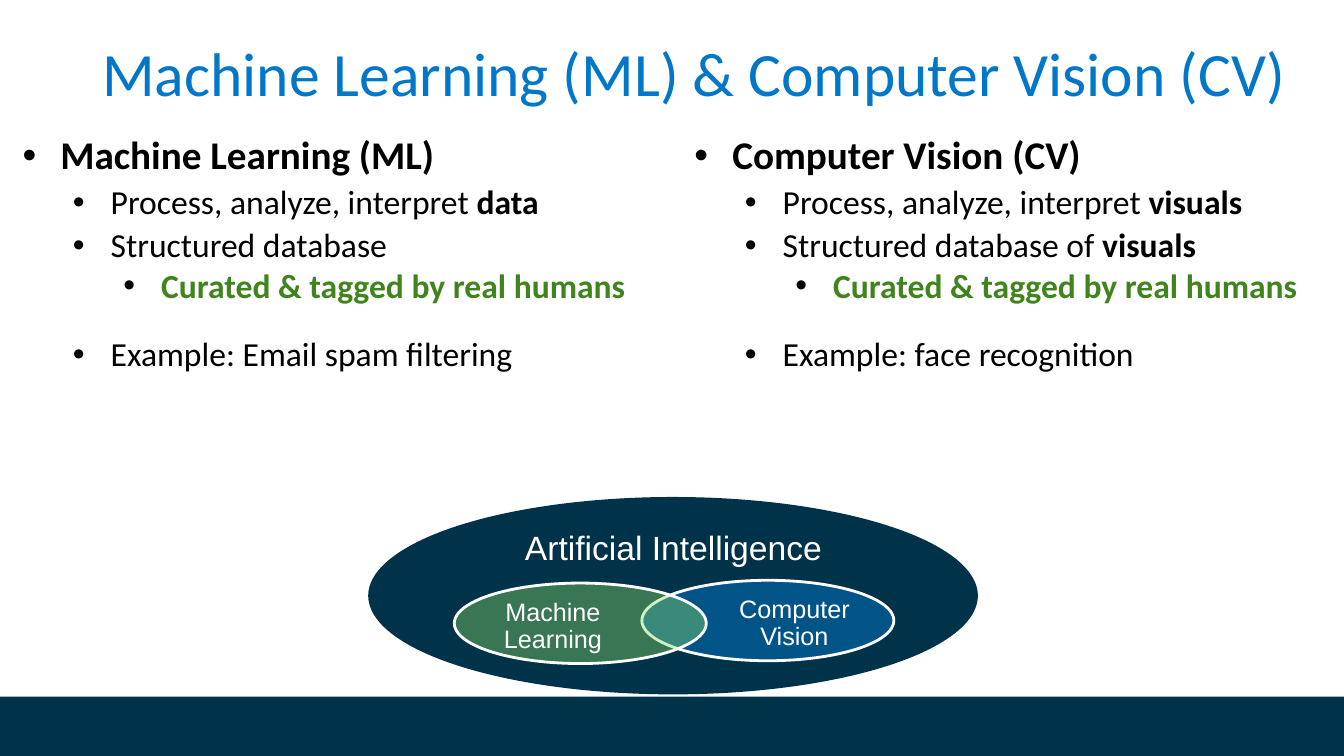
import lxml.etree
import pptx
import pptx.dml.color
import pptx.enum.shapes
import pptx.enum.text
import pptx.oxml.ns
import pptx.util

Pt = pptx.util.Pt
qn = pptx.oxml.ns.qn
Shape = pptx.enum.shapes.MSO_SHAPE
Align = pptx.enum.text.PP_ALIGN
Anchor = pptx.enum.text.MSO_ANCHOR

COLORS = {
    "title": "0077C8",
    "text": "000000",
    "highlight": "40841D",
    "band": "003349",
    "outer": "003249",
    "vision": "0277C8",
    "learning": "8EDD65",
    "white": "FFFFFF",
}

# Text size, line spacing, space before and space after for each outline level
LEVELS = [(28, 0.9, 10, 0), (24, 0.9, 5, 0), (24, 1.0, 0, 18)]


class SlideBuilder:
    def __init__(self, slide):
        self.slide = slide

    def color(self, name):
        return pptx.dml.color.RGBColor.from_string(COLORS[name])

    def shape(self, kind, left, top, width, height, fill, alpha=None, outlined=False):
        shape = self.slide.shapes.add_shape(
            kind, Pt(left), Pt(top), Pt(width), Pt(height))
        shape.shadow.inherit = False
        shape.fill.solid()
        shape.fill.fore_color.rgb = self.color(fill)
        if alpha is not None:
            color_element = next(shape.element.spPr.iter(qn("a:srgbClr")))
            lxml.etree.SubElement(color_element, qn("a:alpha"), val=str(alpha * 1000))
        if outlined:
            shape.line.color.rgb = self.color("white")
            shape.line.width = Pt(2)
        else:
            shape.line.fill.background()

    def text_frame(self, left, top, width, height, anchor, inset=True):
        box = self.slide.shapes.add_textbox(Pt(left), Pt(top), Pt(width), Pt(height))
        frame = box.text_frame
        frame.word_wrap = True
        frame.vertical_anchor = anchor
        frame.margin_left = frame.margin_right = Pt(7.2 if inset else 0)
        frame.margin_top = frame.margin_bottom = Pt(3.6 if inset else 0)
        return frame

    def run(self, paragraph, text, size, color, font="Calibri", bold=False):
        run = paragraph.add_run()
        run.text = text
        run.font.name = font
        run.font.size = Pt(size)
        run.font.bold = bold
        run.font.color.rgb = self.color(color)

    def title(self, text, left, top, width, height):
        frame = self.text_frame(left, top, width, height, Anchor.MIDDLE)
        paragraph = frame.paragraphs[0]
        paragraph.line_spacing = 0.9
        self.run(paragraph, text, 44, "title")

    def label(self, text, size, left, top, width, height, anchor=Anchor.MIDDLE):
        frame = self.text_frame(left, top, width, height, anchor, inset=False)
        paragraph = frame.paragraphs[0]
        paragraph.alignment = Align.CENTER
        paragraph.line_spacing = 0.9
        self.run(paragraph, text, size, "white", font="Arial")

    def bullet(self, paragraph, level):
        properties = paragraph._p.get_or_add_pPr()
        properties.set("marL", str(Pt(36 * (level + 1))))
        properties.set("indent", str(Pt(-27)))
        bullet_color = lxml.etree.SubElement(properties, qn("a:buClr"))
        lxml.etree.SubElement(bullet_color, qn("a:srgbClr"), val=COLORS["text"])
        lxml.etree.SubElement(properties, qn("a:buFont"), typeface="Arial")
        lxml.etree.SubElement(properties, qn("a:buChar"), char="•")

    def outline(self, items, left, top, width, height):
        frame = self.text_frame(left, top, width, height, Anchor.TOP)
        for index, (level, color, runs) in enumerate(items):
            paragraph = frame.add_paragraph() if index else frame.paragraphs[0]
            size, spacing, before, after = LEVELS[level]
            self.bullet(paragraph, level)
            paragraph.level = level
            paragraph.line_spacing = spacing
            paragraph.space_before = Pt(before if index else 0)
            paragraph.space_after = Pt(after)
            for text, bold in runs:
                self.run(paragraph, text, size, color, bold=bold)


def topic(heading, subject, database, example):
    return [
        (0, "text", [(heading, True)]),
        (1, "text", [("Process, analyze, interpret ", False), (subject, True)]),
        (1, "text", database),
        (2, "highlight", [("Curated & tagged by real humans", True)]),
        (1, "text", [("Example: " + example, False)]),
    ]


def main():
    presentation = pptx.Presentation()
    presentation.slide_width = Pt(960)
    presentation.slide_height = Pt(540)
    builder = SlideBuilder(presentation.slides.add_slide(presentation.slide_layouts[6]))

    # Bottom band and title
    builder.shape(Shape.RECTANGLE, 0, 497.5, 960, 42.5, "band")
    builder.title("Machine Learning (ML) & Computer Vision (CV)", 66, 15, 894, 79)

    # Two columns of bullets
    topics = [
        topic("Machine Learning (ML)", "data",
              [("Structured database", False)], "Email spam filtering"),
        topic("Computer Vision (CV)", "visuals",
              [("Structured database of ", False), ("visuals", True)],
              "face recognition"),
    ]
    for column, items in enumerate(topics):
        builder.outline(items, 480 * column, 93.6, 480, 300)

    # Artificial intelligence with its two overlapping fields
    builder.shape(Shape.OVAL, 263, 355, 435.5, 141, "outer")
    builder.label("Artificial Intelligence", 24, 321, 379.5, 320, 63, Anchor.TOP)
    fields = [
        ("Computer Vision", "vision", 50, 458.5, 414.5, 513.5),
        ("Machine Learning", "learning", 40, 324.5, 416.5, 341),
    ]
    for name, fill, alpha, left, top, label_left in fields:
        builder.shape(Shape.OVAL, left, top, 180, 57.5, fill, alpha, outlined=True)
        builder.label(name, 18, label_left, top + 15, 108, 32)

    presentation.save("out.pptx")


if __name__ == "__main__":
    main()
